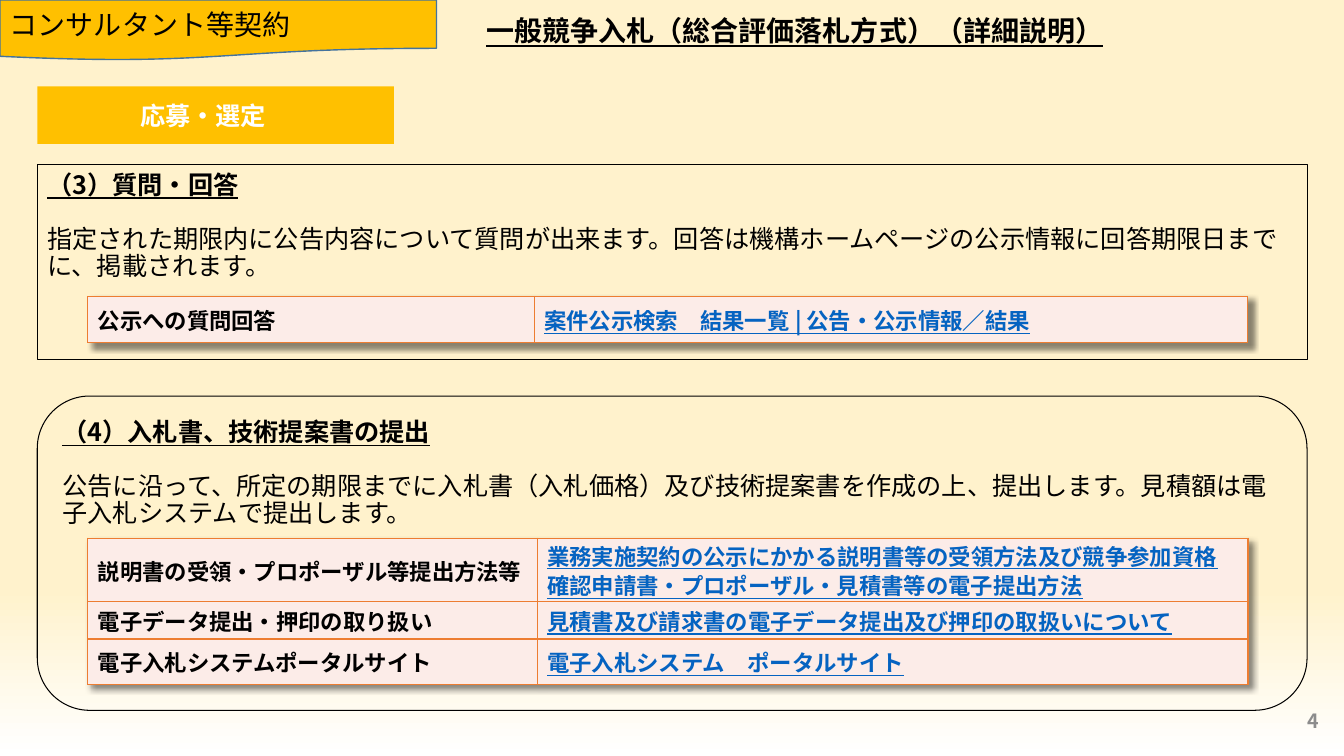
from dataclasses import dataclass
from lxml.etree import SubElement as Sub
from pptx import Presentation
from pptx.dml.color import RGBColor as Rgb
from pptx.enum.shapes import MSO_SHAPE as Kind
from pptx.enum.text import MSO_ANCHOR as Anchor, MSO_AUTO_SIZE as Auto, PP_ALIGN as Align
from pptx.oxml import parse_xml
from pptx.oxml.ns import nsdecls, qn
from pptx.util import Cm, Pt


@dataclass(frozen=True)
class Theme:
    face: str = "Noto Sans CJK JP"
    ink: str = "000000"
    white: str = "FFFFFF"
    cream: str = "FFF2CC"
    gold: str = "FFC000"
    navy: str = "43739E"
    rose: str = "FCECE8"
    edge: str = "ED7D31"
    link: str = "0563C1"
    gray: str = "8C8C8C"
    head: float = 20
    body: float = 18
    cell: float = 16
    note: float = 14


T = Theme()
SHADOW = (f'<a:effectLst {nsdecls("a")}><a:outerShdw blurRad="50800" dist="50800" dir="2700000">'
          '<a:srgbClr val="000000"><a:alpha val="45000"/></a:srgbClr></a:outerShdw></a:effectLst>')


def style(para, size, color=T.ink, bold=False, line=False, align=Align.LEFT):
    para.alignment = align
    for run in para.runs:
        font = run.font
        font.name, font.size, font.bold, font.underline = T.face, Pt(size), bold, line
        font.color.rgb = Rgb.from_string(color)
        Sub(font._element, qn("a:ea"), typeface=T.face)


def write(frame, text, size, **look):
    frame.word_wrap = True
    frame.vertical_anchor = Anchor.MIDDLE
    frame.text = text
    style(frame.paragraphs[0], size, **look)


def label(slide, box, text, size, **look):
    shape = slide.shapes.add_textbox(*map(Cm, box))
    write(shape.text_frame, text, size, **look)


def block(slide, kind, box, fill=None, line=None, width=1):
    shape = slide.shapes.add_shape(kind, *map(Cm, box))
    shape.shadow.inherit = False
    paint(shape, fill, line, width)
    return shape


def paint(shape, fill, line, width):
    if fill:
        shape.fill.solid()
        shape.fill.fore_color.rgb = Rgb.from_string(fill)
    else:
        shape.fill.background()
    if line:
        shape.line.color.rgb = Rgb.from_string(line)
        shape.line.width = Pt(width)
    else:
        shape.line.fill.background()


def fill_panel(shape, head, body):
    """Set a bold heading and its text, one line apart, at the top of a panel."""
    paint(shape, None, T.ink, 0.75)
    frame = shape.text_frame
    frame.text = f"{head}\n{body}"
    frame.word_wrap = True
    frame.auto_size = Auto.NONE
    frame.vertical_anchor = Anchor.TOP
    frame.margin_left = frame.margin_right = Cm(0.25)
    frame.margin_top = Cm(0.2)
    pitch = Pt(19.4)
    title, text = frame.paragraphs
    style(title, T.body, bold=True, line=True)
    style(text, T.body)
    title.line_spacing = text.line_spacing = pitch
    title.space_before = Pt(0)
    text.space_before = pitch


def border(cell):
    props = cell._tc.get_or_add_tcPr()
    for side in "LRTB":
        line = Sub(props, qn(f"a:ln{side}"), w=str(Pt(1)))
        Sub(Sub(line, qn("a:solidFill")), qn("a:srgbClr"), val=T.edge)


def grid(slide, left, top, cols, rows):
    """Draw label and link pairs; each row is (height, label, link)."""
    high = sum(row[0] for row in rows)
    box = map(Cm, (left, top, sum(cols), high))
    table = slide.shapes.add_table(len(rows), len(cols), *box).table
    table.first_row = table.horz_banding = False
    table._tbl.tblPr.insert(0, parse_xml(SHADOW))
    for col, wide in zip(table.columns, cols):
        col.width = Cm(wide)
    looks = {"color": T.ink}, {"color": T.link, "line": True}
    for row, (tall, *texts) in zip(table.rows, rows):
        row.height = Cm(tall)
        for cell, text, look in zip(row.cells, texts, looks):
            border(cell)
            cell.fill.solid()
            cell.fill.fore_color.rgb = Rgb.from_string(T.rose)
            write(cell.text_frame, text, T.cell, bold=True, **look)
            cell.text_frame.paragraphs[0].line_spacing = Pt(21)
            cell.vertical_anchor = Anchor.MIDDLE
            cell.margin_top, cell.margin_bottom = Cm(0.1), Cm(0)


def backdrop(slide):
    fill = slide.background.fill
    fill.gradient()
    fill.gradient_angle = 270
    for stop, place, color in zip(fill.gradient_stops, (0.78, 1), (T.cream, T.white)):
        stop.position = place
        stop.color.rgb = Rgb.from_string(color)


def banner(slide, left, top):
    flag = block(slide, Kind.FLOWCHART_DOCUMENT, (left, top, 11, 1.52), T.gold, T.navy)
    write(flag.text_frame, "コンサルタント等契約", T.head)
    label(slide, (left + 12.01, top, 16.81, 1.55),
          "一般競争入札（総合評価落札方式）（詳細説明）", T.head, bold=True, line=True)
    step = block(slide, Kind.RECTANGLE, (left + 0.94, top + 2.18, 8.99, 1.45), T.gold)
    write(step.text_frame, "応募・選定　", T.body, color=T.white, bold=True, align=Align.CENTER)


def questions(slide, left, top, wide, high):
    panel = slide.shapes.title
    panel.left, panel.top, panel.width, panel.height = map(Cm, (left, top, wide, high))
    fill_panel(panel, "（3）質問・回答",
               "指定された期限内に公告内容について質問が出来ます。"
               "回答は機構ホームページの公示情報に回答期限日までに、掲載されます。")
    grid(slide, left + 1.27, top + 3.33, (11.25, 17.98), [
        (1.17, "公示への質問回答", "案件公示検索　結果一覧 | 公告・公示情報／結果")])


def bids(slide, left, top, wide, high):
    panel = block(slide, Kind.ROUNDED_RECTANGLE, (left, top, wide, high))
    fill_panel(panel, "（4）入札書、技術提案書の提出",
               "公告に沿って、所定の期限までに入札書（入札価格）及び技術提案書を作成の上、"
               "提出します。見積額は電子入札システムで提出します。")
    grid(slide, left + 1.27, top + 3.58, (11.33, 17.91), [
        (1.6, "説明書の受領・プロポーザル等提出方法等",
         "業務実施契約の公示にかかる説明書等の受領方法及び競争参加資格"
         "確認申請書・プロポーザル・見積書等の電子提出方法"),
        (0.94, "電子データ提出・押印の取り扱い",
         "見積書及び請求書の電子データ提出及び押印の取扱いについて"),
        (1.14, "電子入札システムポータルサイト", "電子入札システム　ポータルサイト")])


def main():
    deck = Presentation()
    deck.slide_width, deck.slide_height = Cm(33.87), Cm(19.05)
    slide = deck.slides.add_slide(deck.slide_layouts[5])
    backdrop(slide)
    banner(slide, 0, 0)
    questions(slide, 0.94, 4.14, 32, 4.93)
    bids(slide, 0.94, 9.98, 32, 7.92)
    label(slide, (25.88, 17.65, 7.62, 1.02), "4", T.note,
          color=T.gray, bold=True, align=Align.RIGHT)
    deck.save("out.pptx")


if __name__ == "__main__":
    main()
